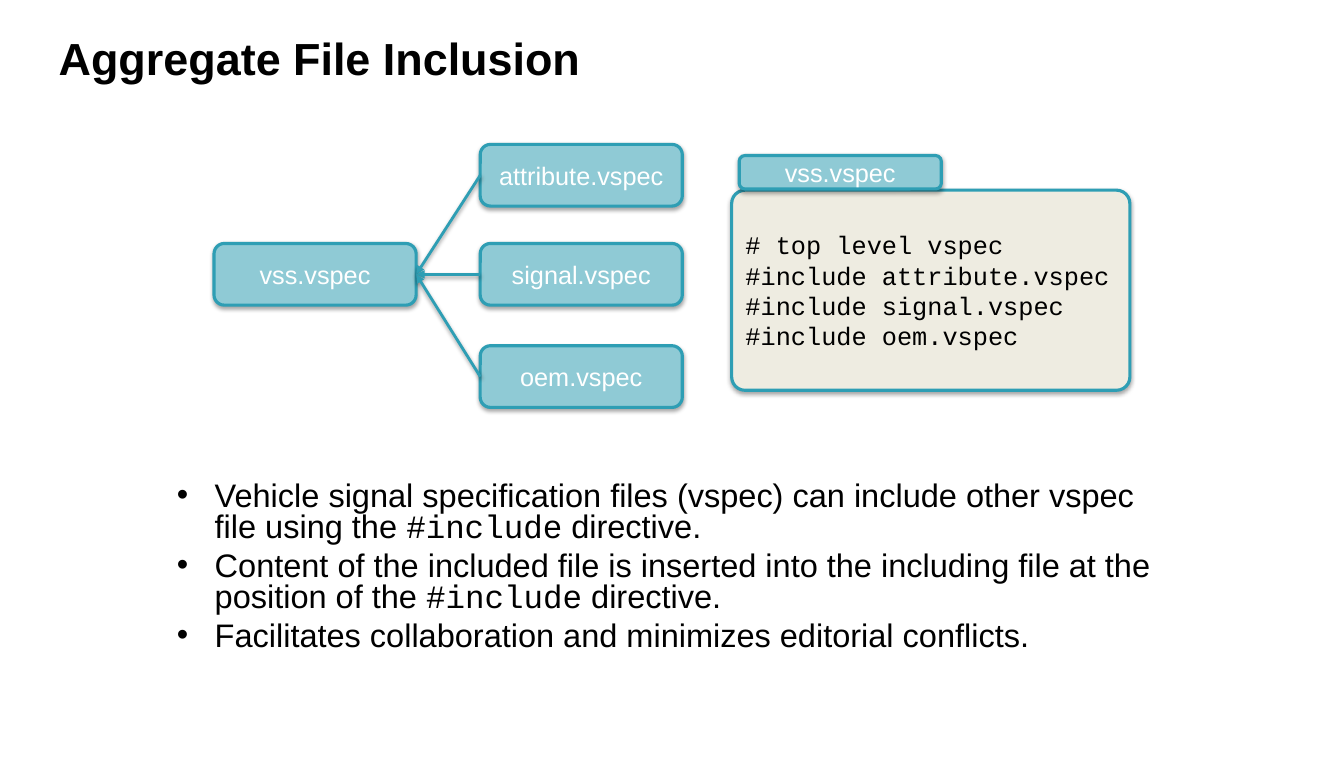
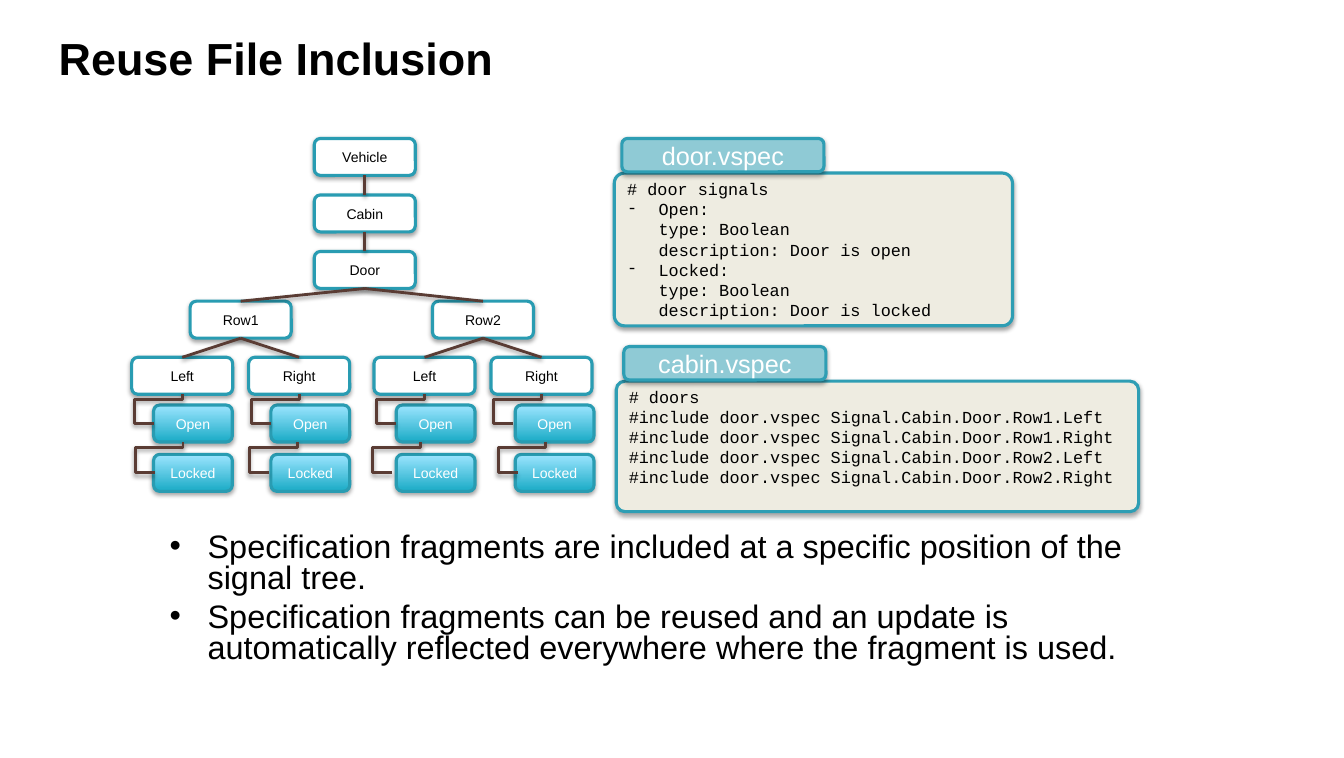
from dataclasses import dataclass

from lxml import etree
from pptx import Presentation
from pptx import util as u
from pptx.dml import color as dml
from pptx.enum import shapes, text
from pptx.oxml import ns

# Shared look
SANS, MONO = "Arial", "Courier New"
BLACK, WHITE = "000000", "FFFFFF"
TEAL, PALE_TEAL, TREE_EDGE = "2E9EB4", "8FCAD5", "299CB2"
SAND, BROWN = "EEECE1", "5A3C34"
GRADIENT = ("1AABC6", "9CE5FF")
DIRECTIVE = "#include"
TAB_WIDTH, TAB_HEIGHT = 5.08, 0.84


@dataclass(frozen=True)
class Area:
    """A rectangle in centimetres."""
    left: float
    top: float
    width: float
    height: float

    @property
    def center(self) -> float:
        return self.left + self.width / 2

    @property
    def middle(self) -> float:
        return self.top + self.height / 2

    @property
    def right(self) -> float:
        return self.left + self.width

    @property
    def bottom(self) -> float:
        return self.top + self.height

    def lengths(self) -> tuple:
        return tuple(u.Cm(n) for n in (self.left, self.top, self.width, self.height))


@dataclass(frozen=True)
class BoxStyle:
    fill: str | tuple[str, str]
    edge: str
    ink: str
    size: float
    font: str = SANS
    align: text.PP_ALIGN = text.PP_ALIGN.CENTER
    rounding: float = 0.167


@dataclass(frozen=True)
class CodePanel:
    name: str
    area: Area
    size: float
    lines: list[str]
    bottom_inset: float = 0.13


@dataclass(frozen=True)
class Side:
    """One door: its offset from the row, its leaves and its lower elbow."""
    name: str
    shift: float
    leaf_left: float
    elbow_center: float


FILE = BoxStyle(PALE_TEAL, TEAL, WHITE, 18)
BRANCH = BoxStyle(WHITE, TREE_EDGE, BLACK, 10)
LEAF = BoxStyle(GRADIENT, TREE_EDGE, WHITE, 10)
TITLE_AREA = Area(1.22, 0.51, 30.4, 1.85)
ROWS = (
    ("Row1", 6.05, (Side("Left", -1.47, 3.86, 4.6), Side("Right", 1.47, 6.81, 7.47))),
    ("Row2", 12.14, (Side("Left", -1.47, 9.96, 10.57), Side("Right", 1.47, 12.95, 13.72))),
)


def rgb(value: str) -> dml.RGBColor:
    return dml.RGBColor.from_string(value)


def style_font(font, name: str, size: float, ink: str, bold: bool = False) -> None:
    font.name, font.size, font.bold = name, u.Pt(size), bold
    font.color.rgb = rgb(ink)


def add_shadow(shape, opacity: int) -> None:
    effects = etree.SubElement(shape._element.spPr, ns.qn("a:effectLst"))
    shadow = etree.SubElement(effects, ns.qn("a:outerShdw"), blurRad="40000",
                              dist="22000", dir="5400000", rotWithShape="0")
    tint = etree.SubElement(shadow, ns.qn("a:srgbClr"), val=BLACK)
    etree.SubElement(tint, ns.qn("a:alpha"), val=str(opacity * 1000))


def place(shape, area: Area) -> None:
    shape.left, shape.top, shape.width, shape.height = area.lengths()


def add_page(deck, title: str, body_area: Area, size: float, bullets: list[str]):
    """Add a page with its title and its bulleted list."""
    page = deck.slides.add_slide(deck.slide_layouts[1])
    heading, body = page.placeholders
    place(heading, TITLE_AREA)
    heading.text_frame.text = title
    heading.text_frame.auto_size = text.MSO_AUTO_SIZE.NONE
    heading.text_frame.vertical_anchor = text.MSO_ANCHOR.MIDDLE
    para = heading.text_frame.paragraphs[0]
    para.alignment = text.PP_ALIGN.LEFT
    style_font(para.runs[0].font, SANS, 32, BLACK, bold=True)

    place(body, body_area)
    frame = body.text_frame
    frame.auto_size = text.MSO_AUTO_SIZE.NONE
    for index, bullet in enumerate(bullets):
        para = frame.add_paragraph() if index else frame.paragraphs[0]
        para.line_spacing = 0.8
        para.space_before = u.Pt(5.6 if index else 0)
        for piece in filter(None, bullet.partition(DIRECTIVE)):
            span = para.add_run()
            span.text = piece
            style_font(span.font, MONO if piece == DIRECTIVE else SANS, size, BLACK)
    return page


def add_box(page, area: Area, content: str, style: BoxStyle):
    box = page.shapes.add_shape(shapes.MSO_SHAPE.ROUNDED_RECTANGLE, *area.lengths())
    box.adjustments[0] = style.rounding
    if isinstance(style.fill, tuple):
        box.fill.gradient()
        box.fill.gradient_angle = 90
        for position, (stop, tint) in enumerate(zip(box.fill.gradient_stops, style.fill)):
            stop.position = position
            stop.color.rgb = rgb(tint)
    else:
        box.fill.solid()
        box.fill.fore_color.rgb = rgb(style.fill)
    box.line.color.rgb = rgb(style.edge)
    box.line.width = u.Pt(2.25)
    add_shadow(box, 35)
    frame = box.text_frame
    frame.word_wrap = True
    frame.vertical_anchor = text.MSO_ANCHOR.MIDDLE
    frame.text = content
    for para in frame.paragraphs:
        para.alignment = style.align
        for span in para.runs:
            style_font(span.font, style.font, style.size, style.ink)
    return box


def add_dash(para) -> None:
    props = para._p.get_or_add_pPr()
    props.set("marL", str(u.Cm(0.79)))
    props.set("indent", str(-u.Cm(0.79)))
    etree.SubElement(props, ns.qn("a:buFont"), typeface=MONO)
    etree.SubElement(props, ns.qn("a:buChar"), char="-")


def add_code_panel(page, panel: CodePanel) -> None:
    """Draw a code listing with its file name on a tab; "- " starts a list item."""
    style = BoxStyle(SAND, TEAL, BLACK, panel.size, MONO, text.PP_ALIGN.LEFT, 0.067)
    content = "\n".join(line.removeprefix("- ") for line in panel.lines)
    box = add_box(page, panel.area, content, style)
    box.text_frame.margin_bottom = u.Cm(panel.bottom_inset)
    for line, para in zip(panel.lines, box.text_frame.paragraphs):
        if line.startswith("- "):
            add_dash(para)
    tab = Area(panel.area.left + 0.19, panel.area.top - 0.87, TAB_WIDTH, TAB_HEIGHT)
    add_box(page, tab, panel.name, FILE)


def add_link(page, start: tuple[float, float], end: tuple[float, float], tint: str,
             kind=shapes.MSO_CONNECTOR.STRAIGHT, arrow: bool = False):
    link = page.shapes.add_connector(kind, *(u.Cm(n) for n in start + end))
    link.line.color.rgb = rgb(tint)
    link.line.width = u.Pt(2)
    if arrow:
        etree.SubElement(link.line._get_or_add_ln(), ns.qn("a:tailEnd"), type="triangle")
    add_shadow(link, 38)
    return link


def add_elbow(page, center: float, top: float, bottom: float) -> None:
    """Link down from a parent, out past the leaf's left edge and back into it."""
    drop, across = bottom - top, 0.71
    # The frame is laid out unrotated about its centre, then turned a quarter
    x = center - (across + drop) / 2
    y = (top + bottom - across) / 2
    link = add_link(page, (x, y), (x + drop, y + across), BROWN,
                    shapes.MSO_CONNECTOR.ELBOW)
    props = link._element.spPr
    props.find(ns.qn("a:xfrm")).set("rot", "5400000")
    geometry = props.find(ns.qn("a:prstGeom"))
    geometry.set("prst", "bentConnector4")
    guides = geometry.find(ns.qn("a:avLst"))
    for name, ratio in (("adj1", 0.14 / drop), ("adj2", (across + 0.49) / across)):
        etree.SubElement(guides, ns.qn("a:gd"), name=name,
                         fmla=f"val {round(ratio * 100000)}")


def add_signal_tree(page) -> None:
    """Draw the vehicle tree: trunk, two rows, two sides each, two leaves each."""
    width, height, leaf_width = 2.54, 0.93, 1.98
    links, elbows = [], []

    def branch(name: str, center: float, top: float, parent: Area | None) -> Area:
        area = Area(center - width / 2, top, width, height)
        add_box(page, area, name, BRANCH)
        if parent:
            links.append((parent, area))
        return area

    trunk = None
    for level, name in enumerate(("Vehicle", "Cabin", "Door")):
        trunk = branch(name, 9.17, 3.48 + level * 1.42, trunk)
    for row_name, row_center, sides in ROWS:
        row = branch(row_name, row_center, 7.57, trunk)
        for side in sides:
            door = branch(side.name, row_center + side.shift, 8.98, row)
            parent_bottom = door.bottom
            for leaf_name, top, center in (("Open", 10.18, door.center),
                                           ("Locked", 11.42, side.elbow_center)):
                leaf = Area(side.leaf_left, top, leaf_width, height)
                add_box(page, leaf, leaf_name, LEAF)
                elbows.append((center, parent_bottom, leaf.middle))
                parent_bottom = leaf.bottom
    for parent, child in links:
        add_link(page, (parent.center, parent.bottom), (child.center, child.top), BROWN)
    for elbow in elbows:
        add_elbow(page, *elbow)


def build_aggregate_page(deck) -> None:
    page = add_page(deck, "Aggregate File Inclusion", Area(4.19, 11.99, 25.35, 5.03), 23.2, [
        "Vehicle signal specification files (vspec) can include other vspec file "
        "using the #include directive.",
        "Content of the included file is inserted into the including file at the "
        "position of the #include directive.",
        "Facilitates collaboration and minimizes editorial conflicts.",
    ])
    # Including file and the files it includes
    root = Area(5.38, 6.12, 5.08, 1.55)
    add_box(page, root, "vss.vspec", FILE)
    for name, top in (("attribute", 3.63), ("signal", 6.12), ("oem", 8.69)):
        part = Area(12.07, top, root.width, root.height)
        add_box(page, part, f"{name}.vspec", FILE)
        add_link(page, (part.left, part.middle), (root.right, root.middle), TEAL, arrow=True)
    add_code_panel(page, CodePanel("vss.vspec", Area(18.39, 4.78, 10.01, 5.03), 18, [
        "# top level vspec",
        "#include attribute.vspec",
        "#include signal.vspec",
        "#include oem.vspec",
    ]))


def build_reuse_page(deck) -> None:
    page = add_page(deck, "Reuse File Inclusion", Area(4.01, 13.28, 25.58, 3.71), 23.1, [
        "Specification fragments are included at a specific position of the signal tree.",
        "Specification fragments can be reused and an update is automatically "
        "reflected everywhere where the fragment is used.",
    ])
    add_signal_tree(page)
    # Fragment and the file that reuses it; \v breaks a line inside an item
    add_code_panel(page, CodePanel("door.vspec", Area(15.44, 4.35, 10.01, 3.84), 12, [
        "# door signals",
        "- Open:\vtype: Boolean\vdescription: Door is open",
        "- Locked:\vtype: Boolean\vdescription: Door is locked",
    ]))
    includes = [f"#include door.vspec Signal.Cabin.Door.{row}.{side.name}"
                for row, _, sides in ROWS for side in sides]
    add_code_panel(page, CodePanel("cabin.vspec", Area(15.49, 9.58, 13.13, 3.28), 12,
                                   ["# doors", *includes], bottom_inset=0.61))


def main() -> None:
    deck = Presentation()
    deck.slide_width, deck.slide_height = u.Cm(33.78), u.Cm(19.05)
    build_aggregate_page(deck)
    build_reuse_page(deck)
    deck.save("out.pptx")


if __name__ == "__main__":
    main()
